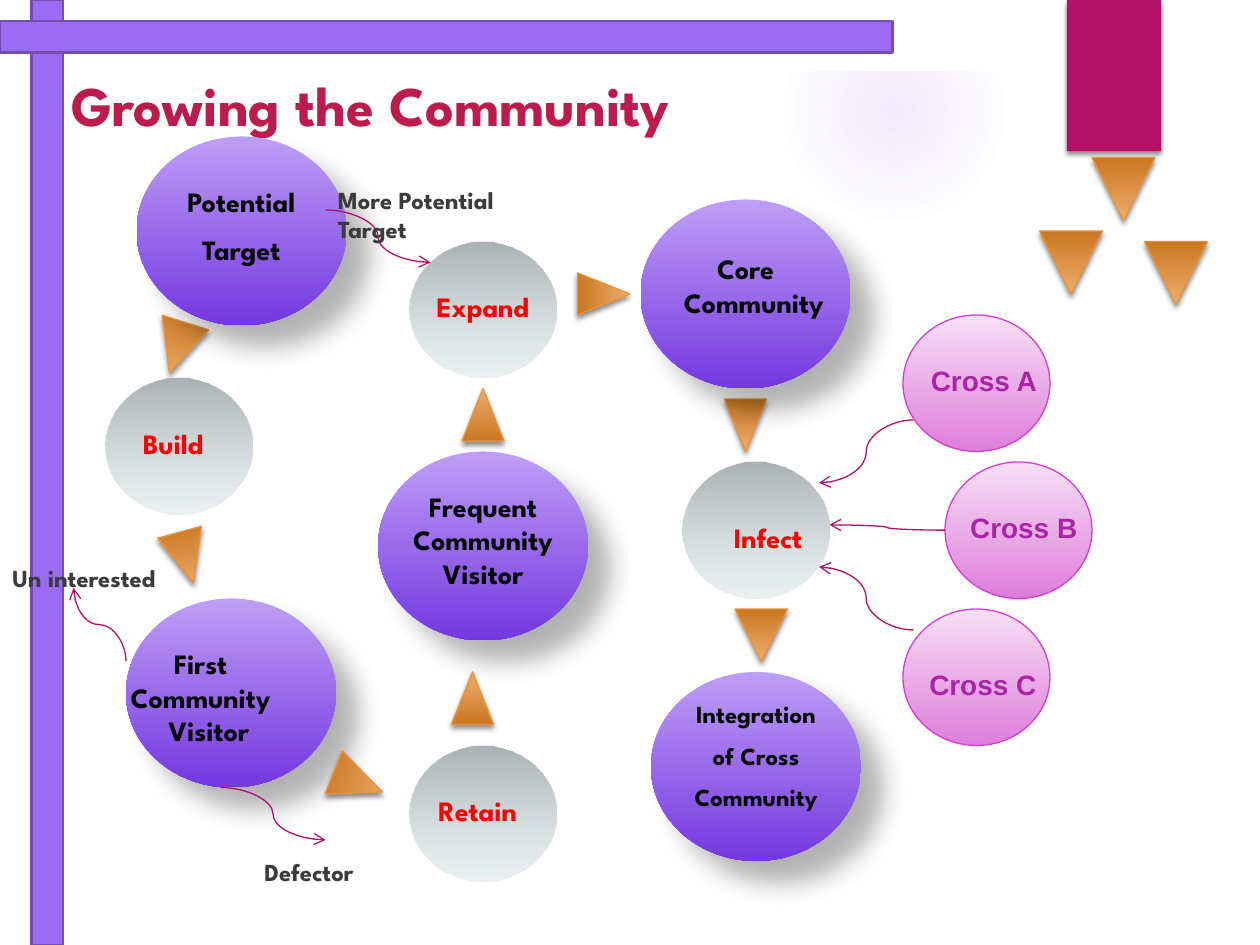
from lxml import etree
from pptx import Presentation, util as u
from pptx.dml.color import RGBColor
from pptx.enum import shapes, text
from pptx.oxml.ns import qn

COLUMNS, ROWS = 120, 90  # twelve grid cells to the inch
HEADING_FONT = "League Spartan"
BLACK, RED, GREY, PLUM = "080808", "FF0000", "3B3B3B", "A925A5"
MAGENTA, PURPLE = "B31166", "9B6BF2"
HANG = 0.13
OVAL = shapes.MSO_SHAPE.OVAL
RECTANGLE = shapes.MSO_SHAPE.RECTANGLE
CENTER, LEFT = text.PP_ALIGN.CENTER, text.PP_ALIGN.LEFT


def cells(*numbers):
    return [u.Inches(n / 12) for n in numbers]


def color(value):
    return RGBColor.from_string(value)


def add_child(parent, tag, **attributes):
    child = etree.SubElement(parent, qn(tag))
    for name, value in attributes.items():
        child.set(name, str(value))
    return child


def add_figure(slide, preset, box, fill, line=None, width=0.75, shadow=None):
    """Fill is one colour or a top and a bottom colour; shadow is alpha, blur, distance, angle."""
    figure = slide.shapes.add_shape(preset, *cells(*box))
    if isinstance(fill, str):
        figure.fill.solid()
        figure.fill.fore_color.rgb = color(fill)
    else:
        figure.fill.gradient()
        figure.fill.gradient_angle = 270
        for stop, value in zip(figure.fill.gradient_stops, fill):
            stop.color.rgb = color(value)
    if line:
        figure.line.color.rgb = color(line)
        figure.line.width = u.Pt(width)
    else:
        figure.line.fill.background()
    figure.shadow.inherit = False
    if shadow:
        alpha, blur, distance, angle = shadow
        effects = figure._element.spPr.find(qn("a:effectLst"))
        outer = add_child(effects, "a:outerShdw", blurRad=u.Pt(blur), dist=u.Pt(distance),
                          dir=angle * 60000, algn="ctr", rotWithShape=0)
        black = add_child(outer, "a:srgbClr", val="000000")
        add_child(black, "a:alpha", val=alpha * 1000)
    return figure


def set_stop_alphas(figure, alphas):
    stops = figure._element.spPr.find(qn("a:gradFill")).iter(qn("a:srgbClr"))
    for stop, alpha in zip(stops, alphas):
        add_child(stop, "a:alpha", val=alpha * 1000)


def add_glow(slide):
    glow = add_figure(slide, OVAL, (74.6, 0, 21, 21), (PURPLE, PURPLE))
    set_stop_alphas(glow, (14, 0))
    glow.fill.gradient_stops[1].position = 0.73
    gradient = glow._element.spPr.find(qn("a:gradFill"))
    gradient.remove(gradient.find(qn("a:lin")))
    radial = add_child(gradient, "a:path", path="circle")
    add_child(radial, "a:fillToRect", l=50000, t=50000, r=50000, b=50000)
    add_figure(slide, RECTANGLE, (0, 0, COLUMNS, 6.75), "FFFFFF")


def add_stage(slide, column, row):
    add_figure(slide, OVAL, (column, row, 20, 18), ("BD9EF6", "7438E0"),
               shadow=(30, 15, 18, 45))


def add_action(slide, column, row):
    action = add_figure(slide, OVAL, (column, row, 14, 13), ("AAB2B3", "D6E1E2"))
    set_stop_alphas(action, (100, 48))


def add_cross(slide, column, row):
    add_figure(slide, OVAL, (column, row, 14, 13), ("F6DFF5", "DF7DDB"), "D53DD0")


def add_pointer(slide, column, row, width, height, turn=0):
    """Triangle that points down, turned clockwise by the given degrees."""
    pointer = add_figure(slide, shapes.MSO_SHAPE.ISOSCELES_TRIANGLE,
                         (column, row, width, height), ("EEAD6D", "C97721"),
                         "E9943A", shadow=(45, 3, 2, 90))
    pointer.rotation = (turn + 180) % 360


def add_curve(slide, *ends):
    curve = slide.shapes.add_connector(shapes.MSO_CONNECTOR.CURVE, *cells(*ends))
    curve.line.color.rgb = color(MAGENTA)
    curve.line.width = u.Pt(0.75)
    add_child(curve.line._get_or_add_ln(), "a:tailEnd", type="arrow")
    add_child(curve._element.spPr, "a:effectLst")
    return curve


def add_label(slide, box, lines, ink, size=16, align=CENTER, hang=0, font=HEADING_FONT,
              first_right=0):
    """Hang is the hanging indent, first_right the right margin of the first line, in inches."""
    frame = slide.shapes.add_textbox(*cells(*box)).text_frame
    frame.word_wrap = True
    for index, words in enumerate(lines):
        paragraph = frame.paragraphs[0] if index == 0 else frame.add_paragraph()
        paragraph.alignment = align
        if hang:
            properties = paragraph._p.get_or_add_pPr()
            properties.set("marL", str(u.Inches(hang)))
            properties.set("indent", str(-u.Inches(hang)))
            if index == 0 and first_right:
                properties.set("marR", str(u.Inches(first_right)))
        if index and hang and not first_right:
            paragraph.space_before = u.Pt(size / 2)
        add_run(paragraph, words, size, ink, font)


def add_run(paragraph, words, size, ink, font):
    run = paragraph.add_run()
    run.text = words
    run.font.name = font
    run.font.size = u.Pt(size)
    run.font.bold = True
    run.font.color.rgb = color(ink)


def set_title(slide, words):
    title = slide.shapes.title
    title.left, title.top, title.width, title.height = cells(5.6, 3.7, 76.3, 12.4)
    frame = title.text_frame
    frame.auto_size = text.MSO_AUTO_SIZE.NONE
    frame.vertical_anchor = text.MSO_ANCHOR.MIDDLE
    frame.paragraphs[0].alignment = LEFT
    add_run(frame.paragraphs[0], words, 32, "BD1B4C", HEADING_FONT)


def add_labels(slide):
    add_label(slide, (14, 17, 18, 9), ["Potential", "Target"], BLACK, hang=HANG)
    add_label(slide, (9.4, 61, 23, 11), ["First", "Community Visitor"], BLACK,
              hang=HANG, first_right=0.3)
    add_label(slide, (36, 46, 20, 11), ["Frequent", "Community", "Visitor"], BLACK)
    add_label(slide, (61, 23.4, 20, 7.7), ["Core Community"], BLACK, hang=HANG)
    add_label(slide, (64, 66, 16, 12.5), ["Integration", "of Cross", "Community"], BLACK,
              size=14, hang=HANG)
    for words, box in (("Build", (8, 40, 17, 4.4)), ("Retain", (37, 75, 17, 4.4)),
                       ("Expand", (40, 27, 12, 4.4)), ("Infect", (63, 49, 20.3, 4.4))):
        add_label(slide, box, [words], RED)
    for words, box in (("Un interested", (0, 53, 20, 4)), ("Defector", (24, 81, 17, 4)),
                       ("More Potential Target", (31, 17, 24, 4))):
        add_label(slide, box, [words], GREY, size=14, align=LEFT)
    for words, box in (("Cross A", (85.7, 34, 16, 4.4)), ("Cross B", (87, 48, 21, 4.4)),
                       ("Cross C", (85, 63, 17.2, 4.4))):
        add_label(slide, box, [words], PLUM, font="Arial")


def main():
    deck = Presentation()
    deck.slide_width, deck.slide_height = cells(COLUMNS, ROWS)
    slide = deck.slides.add_slide(deck.slide_layouts[5])
    set_title(slide, "Growing the Community")

    add_glow(slide)
    add_figure(slide, RECTANGLE, (101.6, 0, 9, 14.4), MAGENTA, shadow=(45, 3, 2, 90))
    first_visitor, *later_stages = (12, 57), (36, 43), (13, 13), (61, 19), (62, 64)
    add_stage(slide, *first_visitor)
    for bar in ((3, 0, 3, ROWS), (0, 2, 85, 3)):
        add_figure(slide, RECTANGLE, bar, PURPLE, "734FB3", 1.5)

    for pointer in ((31.9, 72, 4.4, 5, 291.7), (43, 64, 4, 5, 180), (44, 37, 4, 5, 180),
                    (70, 58, 5, 5), (55.5, 25.5, 4, 5, 270), (69, 38, 4, 5),
                    (15.6, 50.6, 4.3, 5, 344.8), (14.6, 30.6, 4.6, 5, 17.4),
                    (104, 15, 6, 6), (109, 23, 6, 6), (99, 22, 6, 6)):
        add_pointer(slide, *pointer)
    for place in ((10, 36), (39, 71), (39, 23), (65, 44)):
        add_action(slide, *place)
    for place in later_stages:
        add_stage(slide, *place)
    for place in ((86, 58), (90, 44), (86, 30)):
        add_cross(slide, *place)

    for ends in ((21, 75, 31, 80), (31, 20, 41, 25), (90, 50.5, 79, 50),
                 (87, 60, 78, 54), (87, 40, 78, 46)):
        add_curve(slide, *ends)
    leaving = add_curve(slide, 6, 57, 13, 62)
    turned = leaving._element.spPr.find(qn("a:xfrm"))
    turned.set("rot", str(270 * 60000))
    turned.set("flipV", "1")

    add_labels(slide)
    deck.save("out.pptx")


if __name__ == "__main__":
    main()
